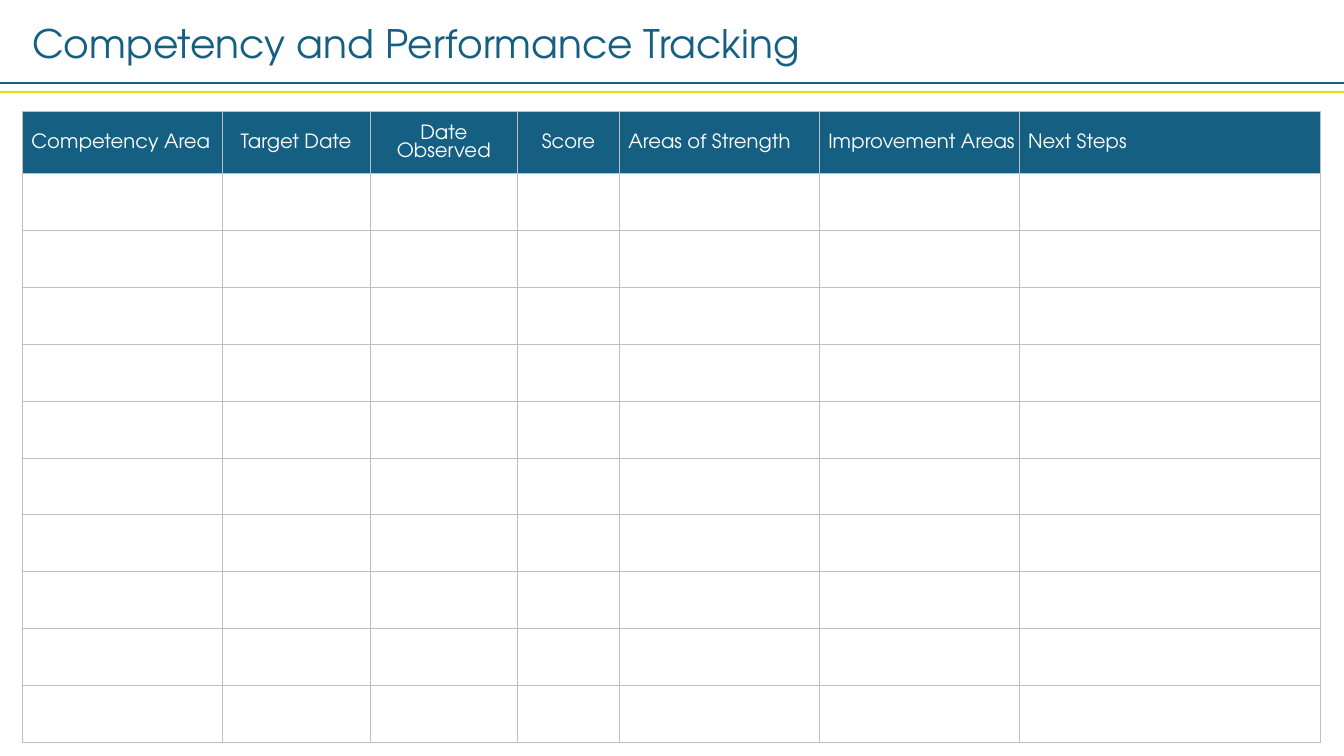
"""Build the competency and performance tracking slide."""
from dataclasses import dataclass

from lxml.etree import SubElement
from pptx import Presentation
from pptx.dml.color import RGBColor
from pptx.enum.shapes import MSO_CONNECTOR
from pptx.enum.text import MSO_ANCHOR, MSO_AUTO_SIZE, PP_ALIGN
from pptx.oxml.ns import qn
from pptx.slide import Slide
from pptx.table import Table, _Cell
from pptx.text.text import TextFrame
from pptx.util import Pt

BLUE = RGBColor(0x15, 0x60, 0x82)
GOLD = RGBColor(0xE8, 0xDD, 0x06)
GREY = RGBColor(0xBF, 0xBF, 0xBF)
WHITE = RGBColor(0xFF, 0xFF, 0xFF)
FONT = "TeX Gyre Adventor"
WIDE, HIGH = Pt(960), Pt(540)
LEFT = Pt(15.84)
HEAD, STEP, COUNT = Pt(44.4), Pt(40.64), 10


@dataclass
class Column:
    label: str
    width: float
    middle: bool = False


@dataclass
class Rule:
    top: float
    color: RGBColor


COLUMNS = [
    Column("Competency Area", 142.8),
    Column("Target Date", 105.6, True),
    Column("Date Observed", 105.6, True),
    Column("Score", 72.6, True),
    Column("Areas of Strength", 142.8),
    Column("Improvement Areas", 142.8),
    Column("Next Steps", 215.2),
]
RULES = [Rule(59.2, BLUE), Rule(65.6, GOLD)]


def apply(target: object, values: dict) -> None:
    for name, value in values.items():
        setattr(target, name, value)


def write(frame: TextFrame, text: str, size: float, color: RGBColor,
          align: PP_ALIGN = PP_ALIGN.LEFT) -> None:
    line = frame.paragraphs[0]
    line.alignment = align
    run = line.add_run()
    run.text = text
    apply(run.font, {"name": FONT, "size": Pt(size)})
    run.font.color.rgb = color


def add_title(slide: Slide) -> None:
    frame = slide.shapes.add_textbox(LEFT, Pt(10.1), Pt(582), Pt(41)).text_frame
    apply(frame, {"word_wrap": True, "auto_size": MSO_AUTO_SIZE.SHAPE_TO_FIT_TEXT})
    write(frame, "Competency and Performance Tracking", 28, BLUE)


def add_rule(slide: Slide, rule: Rule) -> None:
    top = Pt(rule.top)
    line = slide.shapes.add_connector(MSO_CONNECTOR.STRAIGHT, 0, top, WIDE, top)
    line.line.color.rgb = rule.color
    line.line.width = Pt(1.5)
    SubElement(line._element.spPr, qn("a:effectLst"))


def paint(cell: _Cell, color: RGBColor) -> None:
    props = cell._tc.get_or_add_tcPr()
    for side in "LRTB":
        edge = SubElement(props, qn(f"a:ln{side}"), w=str(Pt(0.5)))
        fill = SubElement(edge, qn("a:solidFill"))
        SubElement(fill, qn("a:srgbClr"), val=str(GREY))
    cell.fill.solid()
    cell.fill.fore_color.rgb = color


def fill_head(table: Table) -> None:
    for cell, column in zip(table.rows[0].cells, COLUMNS):
        apply(cell, {
            "vertical_anchor": MSO_ANCHOR.MIDDLE,
            "margin_left": Pt(0.6 if column.middle else 6.5),
            "margin_right": Pt(0.6),
            "margin_top": Pt(0.6),
            "margin_bottom": Pt(0),
        })
        align = PP_ALIGN.CENTER if column.middle else PP_ALIGN.LEFT
        write(cell.text_frame, column.label, 14, WHITE, align)


def add_grid(slide: Slide) -> None:
    width = Pt(sum(column.width for column in COLUMNS))
    table = slide.shapes.add_table(COUNT + 1, len(COLUMNS), LEFT, Pt(79.6),
                                   width, HEAD + COUNT * STEP).table
    for slot, column in zip(table.columns, COLUMNS):
        slot.width = Pt(column.width)
    for index, row in enumerate(table.rows):
        row.height = STEP if index else HEAD
        for cell in row.cells:
            paint(cell, WHITE if index else BLUE)
    fill_head(table)


def main() -> None:
    deck = Presentation()
    apply(deck, {"slide_width": WIDE, "slide_height": HIGH})
    slide = deck.slides.add_slide(deck.slide_layouts[6])
    add_title(slide)
    for rule in RULES:
        add_rule(slide, rule)
    add_grid(slide)
    deck.save("out.pptx")


if __name__ == "__main__":
    main()
